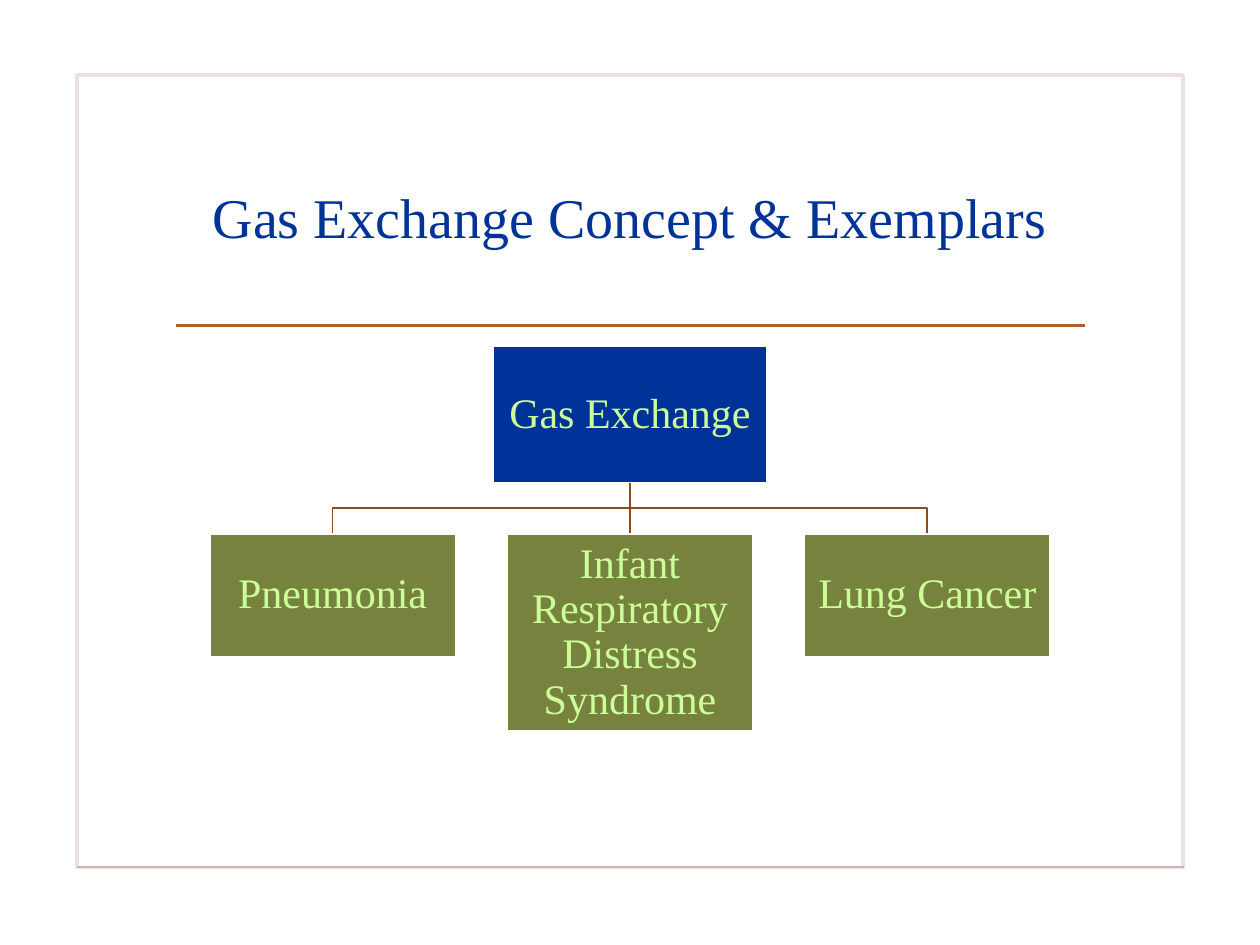
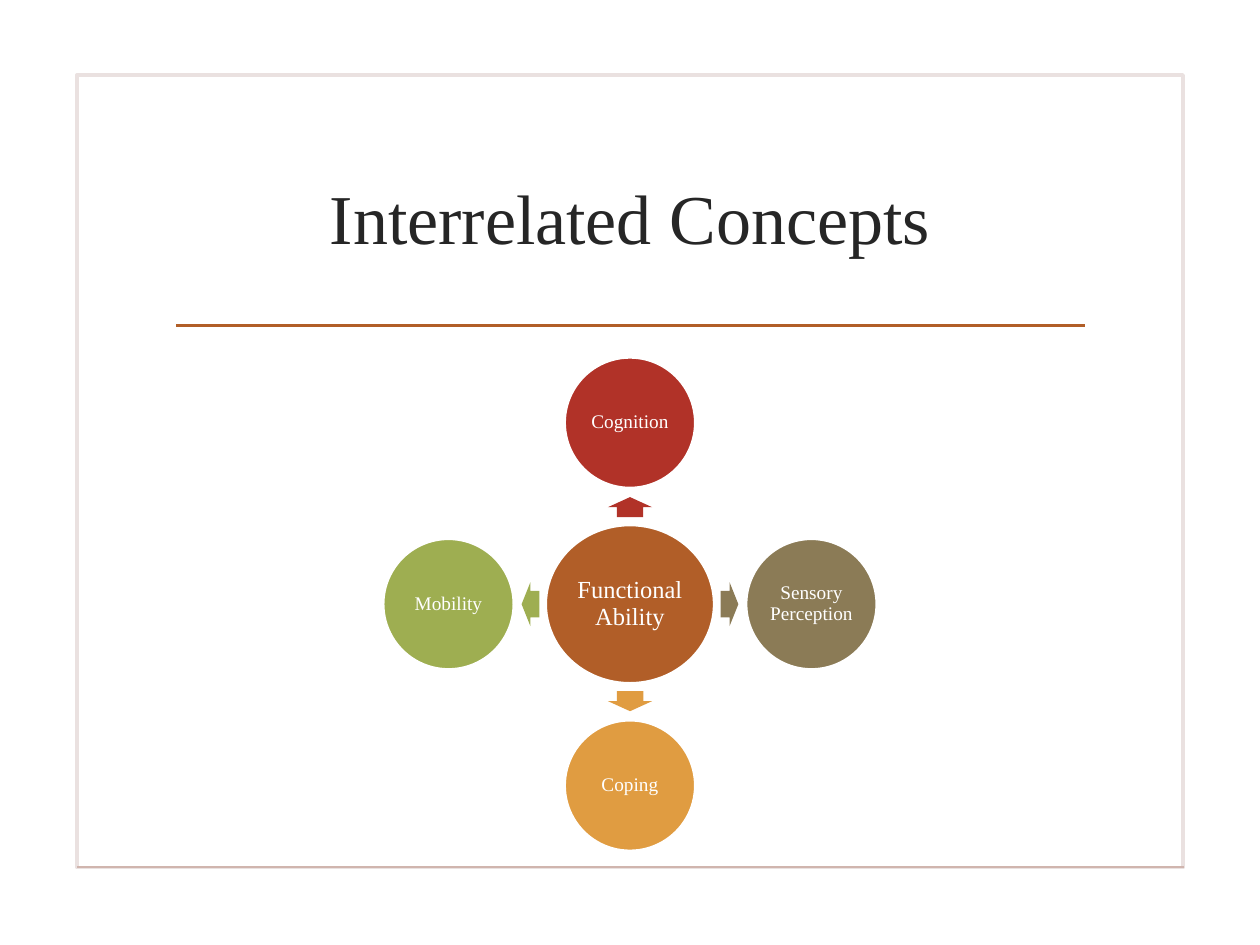
from lxml.etree import SubElement
from pptx import Presentation
from pptx.dml.color import RGBColor
from pptx.enum.shapes import MSO_CONNECTOR, MSO_SHAPE
from pptx.enum.text import MSO_ANCHOR, PP_ALIGN
from pptx.oxml.ns import qn
from pptx.util import Inches, Pt

FONT = "Times New Roman"
COLORS = {
    "white": "FFFFFF",
    "frame": "EAE1E0",
    "frame_base": "D0B5AE",
    "rule": "B15E28",
    "branch": "8E4B20",
    "navy": "003399",
    "olive": "76823D",
    "lime": "CCFF99",
    "ink": "262626",
    "red": "B13228",
    "taupe": "8B7B56",
    "amber": "E09C41",
    "green": "9EAE51",
}
CENTER_X = 5
HUB_Y = 4.795
CHILD_TOP = 4.24
CHILD_PITCH = 2.36
ROOT_BOTTOM = 3.83


def color(name):
    """Return the named palette colour."""
    return RGBColor.from_string(COLORS[name])


def set_line(shape, color_name, width):
    """Give a shape or connector a solid line."""
    shape.line.color.rgb = color(color_name)
    shape.line.width = Pt(width)


def write_text(shape, text, size, color_name, inset=0.02, spacing=0.9):
    """Write one centred paragraph in the middle of a shape."""
    frame = shape.text_frame
    frame.text = text
    frame.word_wrap = True
    frame.vertical_anchor = MSO_ANCHOR.MIDDLE
    frame.margin_left = frame.margin_right = Inches(inset)
    frame.margin_top = frame.margin_bottom = Inches(inset)
    para = frame.paragraphs[0]
    para.alignment = PP_ALIGN.CENTER
    para.line_spacing = spacing
    para.font.name = FONT
    para.font.size = Pt(size)
    para.font.color.rgb = color(color_name)


def add_line(page, start, end, color_name, width):
    """Add a straight line without a shadow."""
    points = [Inches(value) for value in (*start, *end)]
    line = page.shapes.add_connector(MSO_CONNECTOR.STRAIGHT, *points)
    set_line(line, color_name, width)
    SubElement(line._element.spPr, qn("a:effectLst"))


def add_centered(page, kind, center, size, fill=None):
    """Add a preset shape around a centre point."""
    left, top = (middle - side / 2 for middle, side in zip(center, size))
    shape = page.shapes.add_shape(
        kind, Inches(left), Inches(top), Inches(size[0]), Inches(size[1]))
    shape.shadow.inherit = False
    shape.line.fill.background()
    if fill:
        shape.fill.solid()
        shape.fill.fore_color.rgb = color(fill)
    else:
        shape.fill.background()
    return shape


def add_node(page, kind, center, size, fill, text, text_size, text_color):
    """Add a filled, white-edged shape with a label."""
    node = add_centered(page, kind, center, size, fill)
    set_line(node, "white", 1)
    write_text(node, text, text_size, text_color)


def add_page(deck, title, title_size, title_color):
    """Add a slide with the shared frame, rule and title."""
    page = deck.slides.add_slide(deck.slide_layouts[6])
    frame = add_centered(page, MSO_SHAPE.RECTANGLE, (5, 3.74), (8.78, 6.29))
    set_line(frame, "frame", 2)
    add_line(page, (0.61, 6.88), (9.4, 6.88), "frame_base", 1.5)
    add_line(page, (1.4, 2.58), (8.61, 2.58), "rule", 1.75)
    box = page.shapes.add_textbox(
        Inches(1.28), Inches(1), Inches(7.44), Inches(1.43))
    write_text(box, title, title_size, title_color, 0.05, 1)
    return page


def add_branch(page, child_x):
    """Join the root box to a child with a straight or elbow line."""
    if child_x == CENTER_X:
        add_line(page, (CENTER_X, ROOT_BOTTOM), (child_x, CHILD_TOP), "branch", 1)
        return
    bend_y = (ROOT_BOTTOM + CHILD_TOP) / 2
    builder = page.shapes.build_freeform(
        Inches(CENTER_X), Inches(ROOT_BOTTOM))
    corners = [(CENTER_X, bend_y), (child_x, bend_y), (child_x, CHILD_TOP)]
    builder.add_line_segments(
        [(Inches(x), Inches(y)) for x, y in corners], close=False)
    elbow = builder.convert_to_shape()
    elbow.shadow.inherit = False
    elbow.fill.background()
    set_line(elbow, "branch", 1)


def build_exemplars(deck):
    """Build the tree of gas exchange exemplars."""
    page = add_page(deck, "Gas Exchange Concept & Exemplars", 32, "navy")
    children = [
        ("Pneumonia", 0.97),
        ("Infant Respiratory Distress Syndrome", 1.56),
        ("Lung Cancer", 0.97),
    ]
    add_node(page, MSO_SHAPE.RECTANGLE, (CENTER_X, 3.29), (2.17, 1.08),
             "navy", "Gas Exchange", 24, "lime")
    for index, (label, height) in enumerate(children):
        child_x = CENTER_X + (index - 1) * CHILD_PITCH
        add_branch(page, child_x)
        add_node(page, MSO_SHAPE.RECTANGLE, (child_x, CHILD_TOP + height / 2),
                 (1.95, height), "olive", label, 24, "lime")


def build_concepts(deck):
    """Build the hub with its four related concepts."""
    page = add_page(deck, "Interrelated Concepts", 40, "ink")
    concepts = [
        ("Cognition", "red", 0, -1, 270),
        ("Sensory Perception", "taupe", 1, 0, 0),
        ("Coping", "amber", 0, 1, 90),
        ("Mobility", "green", -1, 0, 180),
    ]
    add_node(page, MSO_SHAPE.OVAL, (CENTER_X, HUB_Y), (1.33, 1.25),
             "rule", "Functional Ability", 14, "white")
    for label, fill, step_x, step_y, angle in concepts:
        arrow = add_centered(
            page, MSO_SHAPE.RIGHT_ARROW,
            (CENTER_X + 0.79 * step_x, HUB_Y + 0.77 * step_y),
            (0.16 if step_y else 0.14, 0.35), fill)
        arrow.adjustments[0] = 0.6
        arrow.adjustments[1] = 0.5
        arrow.rotation = angle
        center = (CENTER_X + 1.44 * step_x, HUB_Y + 1.44 * step_y)
        add_node(page, MSO_SHAPE.OVAL, center, (1.03, 1.03),
                 fill, label, 11, "white")


def main():
    """Build and save the deck."""
    deck = Presentation()
    deck.slide_width = Inches(10)
    deck.slide_height = Inches(7.5)
    build_exemplars(deck)
    build_concepts(deck)
    deck.save("out.pptx")


if __name__ == "__main__":
    main()
